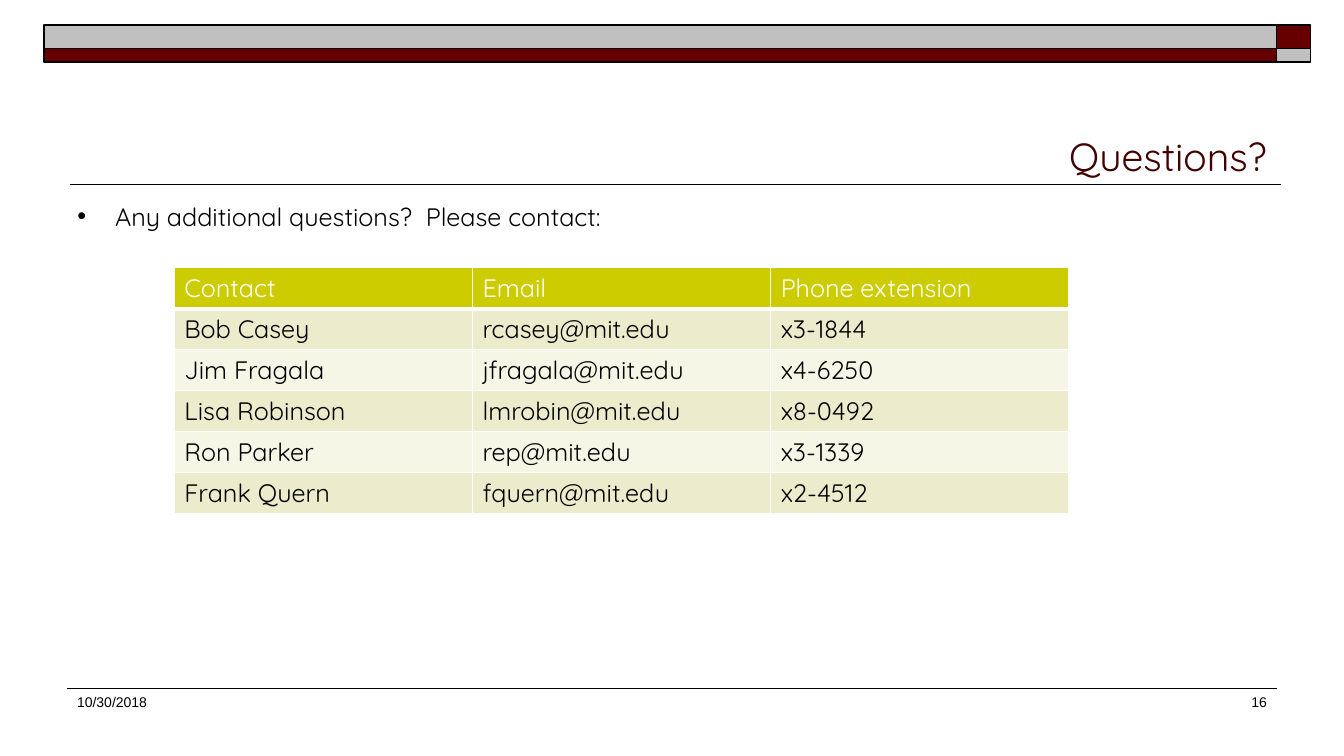
from pptx import Presentation
from pptx.dml.color import RGBColor
from pptx.enum.shapes import MSO_CONNECTOR, MSO_SHAPE
from pptx.enum.text import MSO_ANCHOR, MSO_AUTO_SIZE, PP_ALIGN
from pptx.util import Pt
from lxml.etree import SubElement
from pptx.oxml.ns import qn

PX = 9525
HUE = {
    "black": "000000", "white": "FFFFFF", "maroon": "660000", "gray": "C0C0C0",
    "title": "420000", "head": "CCCC00", "odd": "ECECCC", "even": "F6F6E7",
}


def write(frame, text, size=18, face="Quicksand", hue="black",
          align=PP_ALIGN.LEFT, anchor=MSO_ANCHOR.TOP, space=1.0):
    frame.word_wrap = True
    frame.vertical_anchor = anchor
    frame.text = text
    para = frame.paragraphs[0]
    para.alignment = align
    para.line_spacing = space
    para.space_before = Pt(0)
    font = para.runs[0].font
    font.size = Pt(size)
    font.name = face
    font.bold = False
    font.color.rgb = RGBColor.from_string(HUE[hue])


def place(shape, left, top, width, height):
    shape.left, shape.top = left * PX, top * PX
    shape.width, shape.height = width * PX, height * PX


deck = Presentation()
deck.slide_width, deck.slide_height = 1280 * PX, 720 * PX
slide = deck.slides.add_slide(deck.slide_layouts[1])
shapes = slide.shapes

for left, top, width, height, hue in [
    (1216, 24, 32, 22, "maroon"),
    (42, 24, 1174, 22, "gray"),
    (42, 46, 1174, 13, "maroon"),
    (1216, 46, 32, 13, "gray"),
]:
    bar = shapes.add_shape(MSO_SHAPE.RECTANGLE, 0, 0, PX, PX)
    place(bar, left, top, width, height)
    bar.shadow.inherit = False
    bar.fill.solid()
    bar.fill.fore_color.rgb = RGBColor.from_string(HUE[hue])
    bar.line.color.rgb = RGBColor.from_string(HUE["black"])
    bar.line.width = Pt(1)

for start, end, y, weight in [(1220, 67, 176, 1), (64, 1216, 656, 0.75)]:
    rule = shapes.add_connector(
        MSO_CONNECTOR.STRAIGHT, start * PX, y * PX, end * PX, y * PX)
    rule.line.color.rgb = RGBColor.from_string(HUE["black"])
    rule.line.width = Pt(weight)
    SubElement(rule._element.spPr, qn("a:effectLst"))

for text, left, width, align in [
    ("10/30/2018", 64, 234, PP_ALIGN.LEFT),
    ("16", 949, 267, PP_ALIGN.RIGHT),
]:
    foot = shapes.add_textbox(0, 0, PX, PX)
    place(foot, left, 656, width, 48)
    write(foot.text_frame, text, size=10, face="Arial", align=align)

title = shapes.title
place(title, 64, 56, 1152, 120)
title.text_frame.auto_size = MSO_AUTO_SIZE.NONE
write(title.text_frame, "Questions?", size=28, hue="title",
      align=PP_ALIGN.RIGHT, anchor=MSO_ANCHOR.BOTTOM)

body = slide.placeholders[1]
place(body, 64, 192, 1152, 451)
body.text_frame.auto_size = MSO_AUTO_SIZE.NONE
props = body.text_frame.paragraphs[0]._p.get_or_add_pPr()
props.set("marL", str(49 * PX))
props.set("indent", str(-49 * PX))
SubElement(props, qn("a:buNone"))
write(body.text_frame, "Any additional questions?  Please contact:", space=0.8)

people = [
    ("Contact", "Email", "Phone extension"),
    ("Bob Casey", "rcasey@mit.edu", "x3-1844"),
    ("Jim Fragala", "jfragala@mit.edu", "x4-6250"),
    ("Lisa Robinson", "lmrobin@mit.edu", "x8-0492"),
    ("Ron Parker", "rep@mit.edu", "x3-1339"),
    ("Frank Quern", "fquern@mit.edu", "x2-4512"),
]
grid = shapes.add_table(
    len(people), 3, 166 * PX, 255 * PX, 852 * PX, 39 * len(people) * PX).table
for row, person in enumerate(people):
    fill = "head" if row == 0 else "odd" if row % 2 else "even"
    for col, text in enumerate(person):
        cell = grid.cell(row, col)
        write(cell.text_frame, text, hue="black" if row else "white")
        props = cell._tc.get_or_add_tcPr()
        for side in "LRTB":
            weight = 3 if row == 0 and side == "B" else 1
            edge = SubElement(props, qn("a:ln" + side), w=str(Pt(weight)))
            paint = SubElement(edge, qn("a:solidFill"))
            SubElement(paint, qn("a:srgbClr"), val=HUE["white"])
        cell.fill.solid()
        cell.fill.fore_color.rgb = RGBColor.from_string(HUE[fill])

deck.save("out.pptx")
